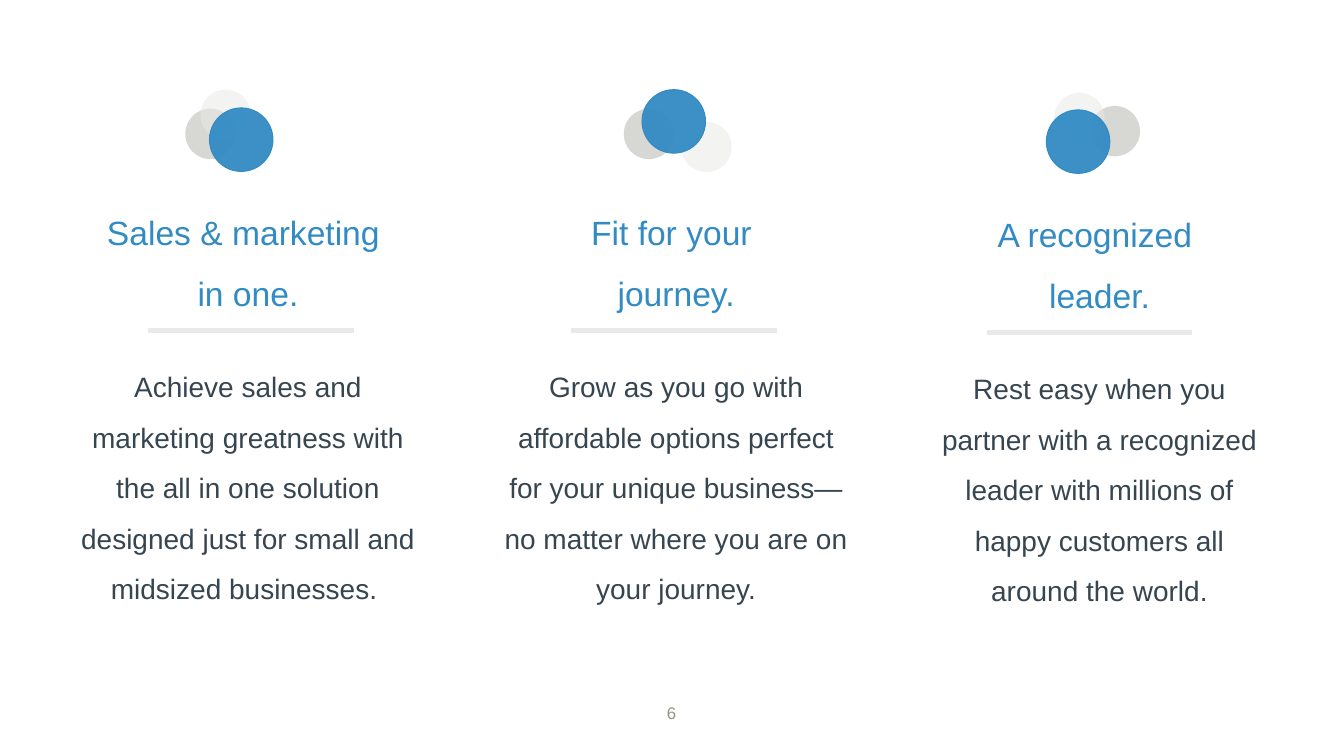
from dataclasses import dataclass

from lxml.etree import SubElement
from pptx import Presentation
from pptx.dml.color import RGBColor
from pptx.enum.shapes import MSO_CONNECTOR, MSO_SHAPE
from pptx.enum.text import MSO_ANCHOR, PP_ALIGN
from pptx.oxml.ns import qn
from pptx.util import Cm, Pt


@dataclass(frozen=True)
class Theme:
    font: str = "Arial"
    blue: str = "328BC3"
    body: str = "364550"
    grey: str = "D3D3D0"
    light: str = "E9E9E7"
    page_number: str = "939389"
    heading_size: int = 24
    body_size: int = 20
    page_number_size: int = 12


@dataclass(frozen=True)
class Box:
    left: float
    top: float
    width: float
    height: float

    def inside(self, left, top, width, height):
        return Box(self.left + left, self.top + top, width, height)

    def lengths(self):
        return [Cm(value) for value in (self.left, self.top, self.width, self.height)]


@dataclass(frozen=True)
class Benefit:
    box: Box
    heading: tuple
    body: str
    circles: tuple
    rule_left: float


THEME = Theme()
CIRCLE_STYLES = (
    (1.27, THEME.grey, 90),
    (1.27, THEME.light, 50),
    (1.6, THEME.blue, 95),
)
RULE_TOP = 4.11
RULE_WIDTH = 5.18
COLUMN_WIDTH = 10.16
COLUMN_HEIGHT = 12.5

BENEFITS = (
    Benefit(
        Box(1.17, 4.22, COLUMN_WIDTH, COLUMN_HEIGHT),
        ("Sales & marketing ", "in one."),
        "Achieve sales and marketing greatness with the all in one solution "
        "designed just for small and midsized businesses. ",
        ((3.5, -1.48), (3.88, -1.96), (4.11, -1.5)),
        2.56,
    ),
    Benefit(
        Box(11.96, 4.22, COLUMN_WIDTH, COLUMN_HEIGHT),
        ("Fit for your ", "journey."),
        "Grow as you go with affordable options perfect for your unique "
        "business—no matter where you are on your journey.",
        ((3.76, -1.48), (5.21, -1.15), (4.22, -1.96)),
        2.44,
    ),
    Benefit(
        Box(22.63, 4.27, COLUMN_WIDTH, COLUMN_HEIGHT),
        ("A recognized ", "leader."),
        "Rest easy when you partner with a recognized leader with millions of "
        "happy customers all around the world.",
        ((4.83, -1.6), (3.94, -1.93), (3.74, -1.5)),
        2.24,
    ),
)


def write_paragraph(paragraph, text, size, color):
    paragraph.text = text
    paragraph.alignment = PP_ALIGN.CENTER
    paragraph.font.name = THEME.font
    paragraph.font.size = Pt(size)
    paragraph.font.color.rgb = RGBColor.from_string(color)


def add_circles(page, box, positions):
    group = page.shapes.add_group_shape()
    for (left, top), (diameter, color, opacity) in zip(positions, CIRCLE_STYLES):
        place = box.inside(left, top, diameter, diameter)
        circle = group.shapes.add_shape(MSO_SHAPE.OVAL, *place.lengths())
        circle.shadow.inherit = False
        circle.fill.solid()
        circle.fill.fore_color.rgb = RGBColor.from_string(color)
        fill_color = circle.fill._xPr.find(qn("a:solidFill"))[0]
        SubElement(fill_color, qn("a:alpha"), val=str(opacity * 1000))
        if color == THEME.blue:
            circle.line.color.rgb = RGBColor.from_string(color)
            circle.line.width = Pt(0.75)
        else:
            circle.line.fill.background()


def add_rule(page, box, left):
    start = box.inside(left, RULE_TOP, RULE_WIDTH, 0)
    rule = page.shapes.add_connector(
        MSO_CONNECTOR.STRAIGHT,
        Cm(start.left), Cm(start.top),
        Cm(start.left + start.width), Cm(start.top),
    )
    rule.line.color.rgb = RGBColor.from_string(THEME.light)
    rule.line.width = Pt(3)
    SubElement(rule._element.spPr, qn("a:effectLst"))


def add_benefit(page, benefit):
    panel = page.shapes.add_shape(MSO_SHAPE.ROUNDED_RECTANGLE, *benefit.box.lengths())
    panel.shadow.inherit = False
    panel.fill.background()
    panel.line.fill.background()
    frame = panel.text_frame
    frame.word_wrap = True
    frame.vertical_anchor = MSO_ANCHOR.TOP
    first, second = benefit.heading
    write_paragraph(frame.paragraphs[0], first, THEME.heading_size, THEME.blue)
    write_paragraph(frame.add_paragraph(), second, THEME.heading_size, THEME.blue)
    body = frame.add_paragraph()
    write_paragraph(body, benefit.body, THEME.body_size, THEME.body)
    body.space_before = Pt(28.7)
    for paragraph in frame.paragraphs:
        paragraph.line_spacing = 1.5
    add_circles(page, benefit.box, benefit.circles)
    add_rule(page, benefit.box, benefit.rule_left)


def add_page_number(page, box, number):
    frame = page.shapes.add_textbox(*box.lengths()).text_frame
    frame.word_wrap = True
    frame.vertical_anchor = MSO_ANCHOR.BOTTOM
    write_paragraph(frame.paragraphs[0], number, THEME.page_number_size, THEME.page_number)


def main():
    deck = Presentation()
    deck.slide_width, deck.slide_height = Cm(33.87), Cm(19.05)
    page = deck.slides.add_slide(deck.slide_layouts[6])
    for benefit in BENEFITS:
        add_benefit(page, benefit)
    add_page_number(page, Box(16.05, 17.5, 1.75, 0.84), "6")
    deck.save("out.pptx")


if __name__ == "__main__":
    main()
